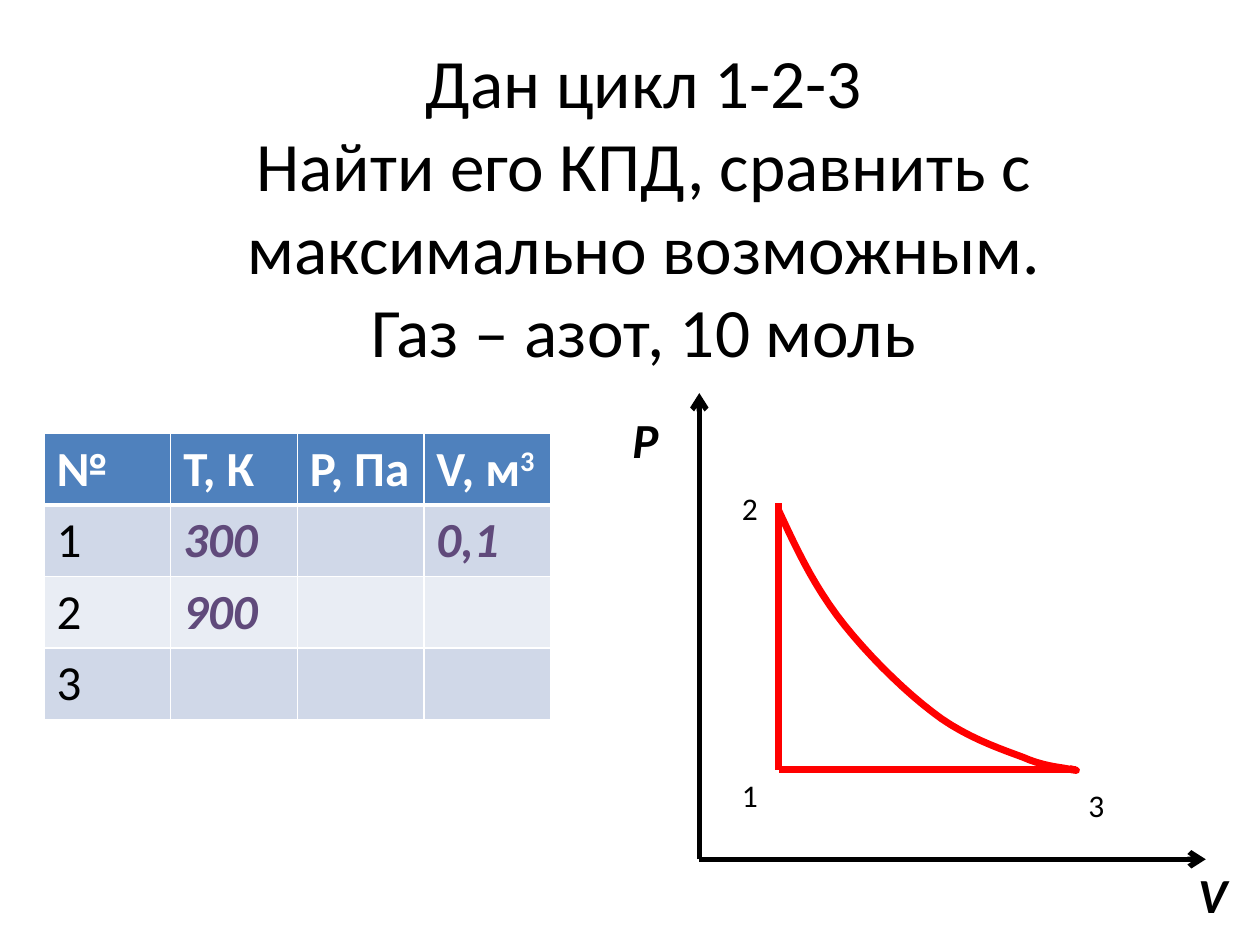
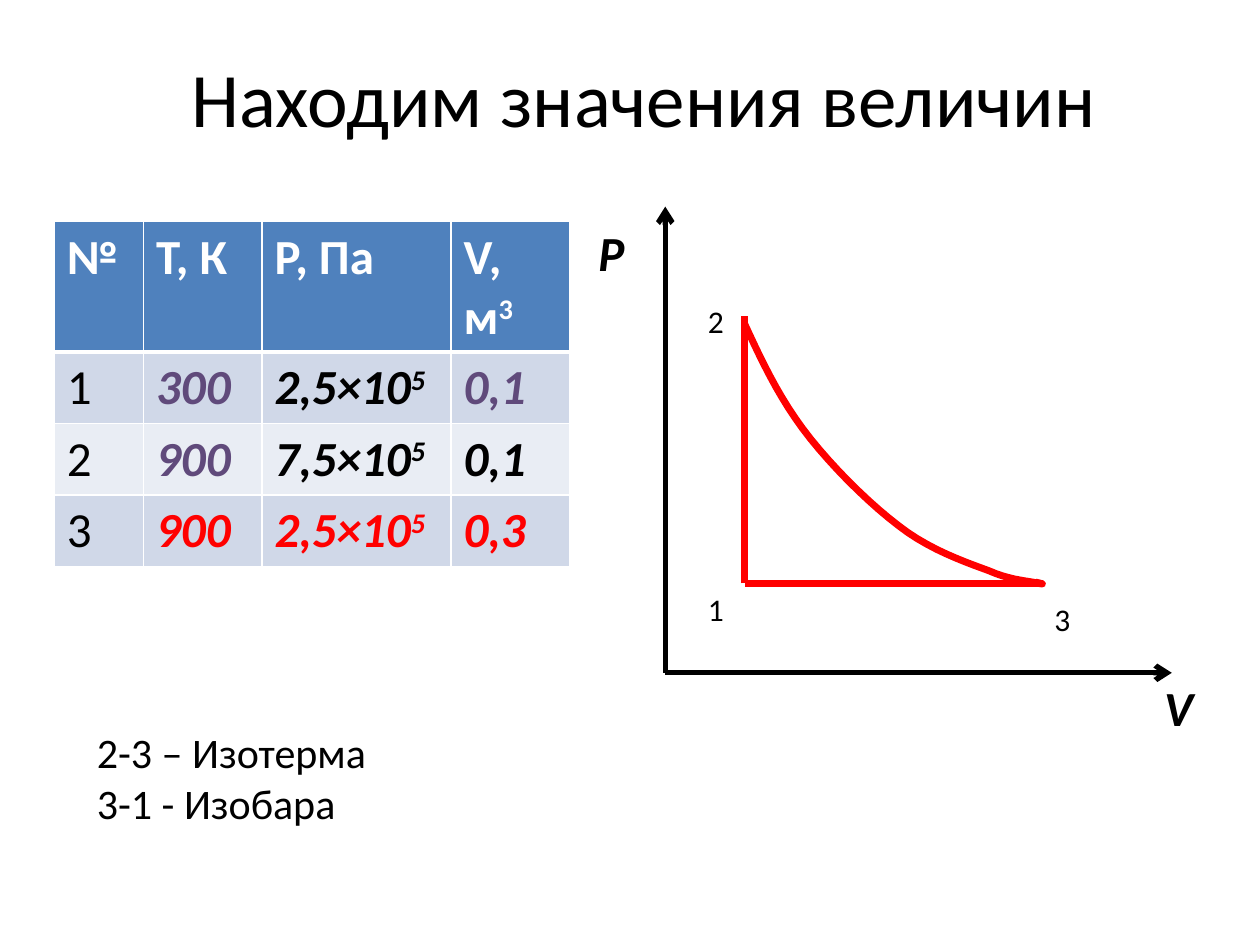
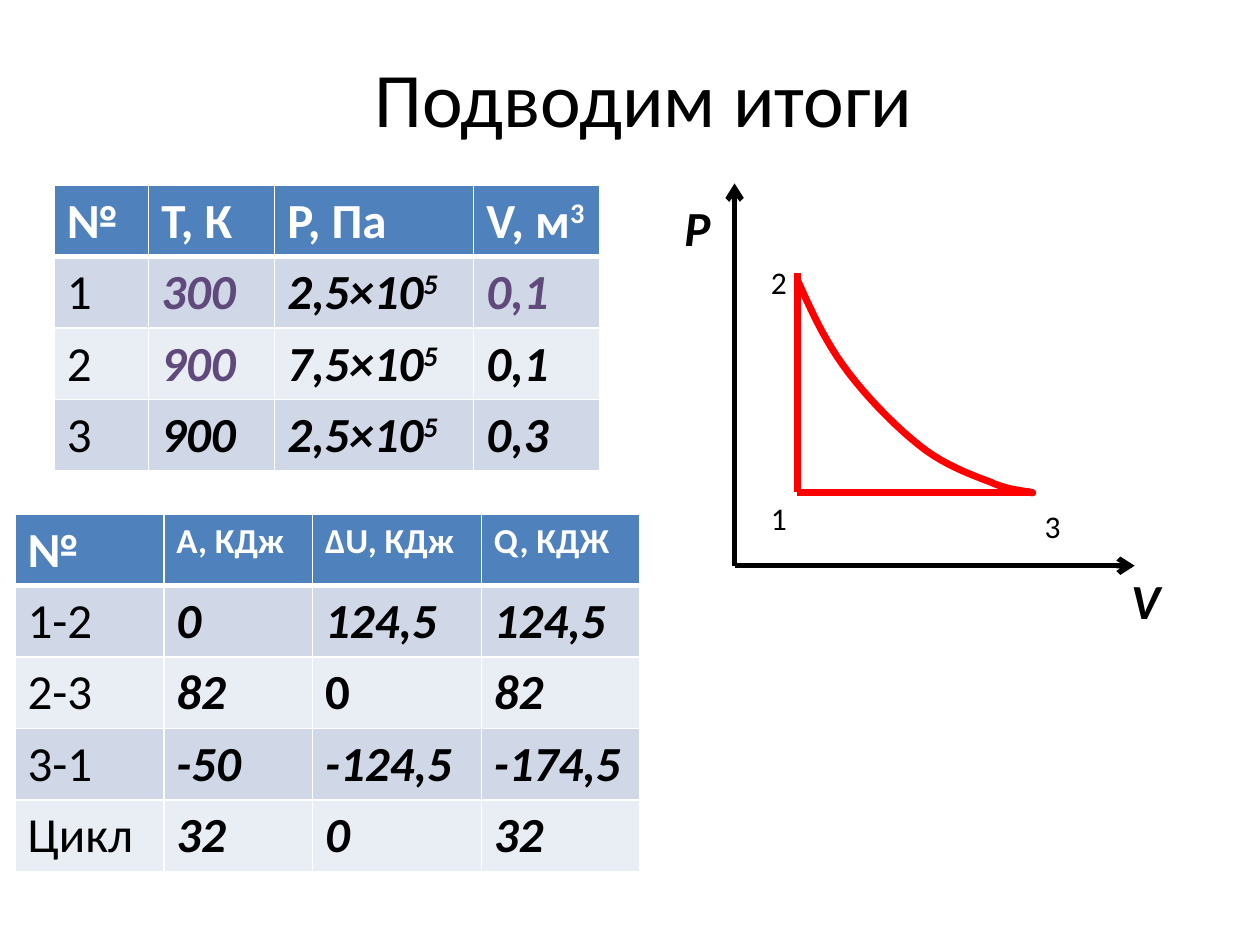
from itertools import chain

from pptx import Presentation
from pptx import util as u
from pptx.dml.color import RGBColor
from pptx.enum import shapes, text
from pptx.oxml import parse_xml
from pptx.oxml.ns import nsdecls, qn

COLS, ROWS = 100, 75
CELL = u.Inches(0.1)
FONT = "Calibri"
BLACK, WHITE, RED, PURPLE = "000000", "FFFFFF", "FF0000", "604A7B"
HEAD, ODD, EVEN = "4F81BD", "D0D8E8", "E9EDF4"
MARKS = {
    "*": {"color": PURPLE},
    "!": {"color": RED},
    "_": {"italic": False},
}

STATE_HEAD = ["№", "T, К", "P, Па", "V, м^3"]
GIVEN = [["1", "*300", "", "*0,1"], ["2", "*900", "", ""], ["3", "", "", ""]]
FOUND = [["1", "*300", "2,5×10^5", "*0,1"], ["2", "*900", "7,5×10^5", "0,1"]]
HEAT_HEAD = ["№", "A, КДж", "ΔU, КДж", "Q, КДЖ"]
HEAT = [
    ["1-2", "0", "124,5", "124,5"],
    ["2-3", "82", "_0", "82"],
    ["3-1", "-50", "-124,5", "-174,5"],
    ["Цикл", "32", "0", "32"],
]

START = (6.3, 27.7)
BENDS = [
    ((7.6, 24.9), (8.9, 22.1), (10.9, 19.4)),
    ((12.9, 16.7), (16, 13.6), (18.5, 11.7)),
    ((20.9, 9.8), (23.8, 8.8), (25.7, 8.1)),
    ((27.5, 7.3), (29, 7.3), (29.6, 7.1)),
    ((30.3, 7), (29.8, 7.1), (29.4, 7.2)),
]
POINTS = [("1", 2.4, 7.1), ("2", 2.4, 29.9), ("3", 29.9, 6.3)]


def grid(*cells):
    """Turn grid cells into lengths."""
    return [u.Emu(round(c * CELL)) for c in cells]


def rgb(code):
    """Turn a hex string into a colour."""
    return RGBColor.from_string(code)


def write(frame, words, size=28, color=BLACK, bold=False, italic=False, align=None):
    """Write lines of text; ^ starts a superscript."""
    for i, line in enumerate(words.split("\n")):
        para = frame.add_paragraph() if i else frame.paragraphs[0]
        para.alignment = align
        for j, part in enumerate(line.split("^")):
            run = para.add_run()
            run.text = part
            font = run.font
            font.name, font.size = FONT, u.Pt(size)
            font.bold, font.italic = bold, italic
            font.color.rgb = rgb(color)
            if j:
                font._element.set("baseline", "30000")


def label(slide, words, x, y, w, h, **style):
    """Add a text box that fits its text."""
    frame = slide.shapes.add_textbox(*grid(x, y, w, h)).text_frame
    frame.word_wrap = False
    frame.auto_size = text.MSO_AUTO_SIZE.SHAPE_TO_FIT_TEXT
    write(frame, words, **style)


def title(slide, words, h=9.3, size=44):
    """Add the centred slide title."""
    frame = slide.shapes.add_textbox(*grid(5, 3, 92.2, h)).text_frame
    frame.word_wrap = True
    frame.vertical_anchor = text.MSO_ANCHOR.MIDDLE
    write(frame, words, size=size, align=text.PP_ALIGN.CENTER)


def frame_cell(cell, fill, base):
    """Give a cell white borders and a fill."""
    props = cell._tc.get_or_add_tcPr()
    for side, width in (("L", 1), ("R", 1), ("T", 1), ("B", base)):
        props.append(parse_xml(
            f'<a:ln{side} {nsdecls("a")} w="{u.Pt(width)}"><a:solidFill>'
            f'<a:srgbClr val="{WHITE}"/></a:solidFill></a:ln{side}>'))
    cell.fill.solid()
    cell.fill.fore_color.rgb = rgb(fill)


def table(slide, x, y, widths, head, body, small=28):
    """Add a banded table with a bold header row."""
    rows = [head] + body
    box = grid(x, y, sum(widths), 5.67 * len(rows))
    tab = slide.shapes.add_table(len(rows), len(widths), *box).table
    for col, width in zip(tab.columns, grid(*widths)):
        col.width = width
    for r, row in enumerate(rows):
        fill = (ODD if r % 2 else EVEN) if r else HEAD
        for c, words in enumerate(row):
            cell = tab.cell(r, c)
            frame_cell(cell, fill, 1 if r else 3)
            if not words:
                continue
            if r == 0:
                style = {"color": WHITE, "bold": True, "size": small if c else 28}
            elif c == 0:
                style = {}
            else:
                mark = MARKS.get(words[0], {})
                words = words[1:] if mark else words
                style = {"bold": True, "italic": True, **mark}
            write(cell.text_frame, words, **style)


def line(slide, start, end, color, width, arrow=False):
    """Draw a straight line, with an arrowhead if asked."""
    link = slide.shapes.add_connector(
        shapes.MSO_CONNECTOR.STRAIGHT, *grid(*start, *end))
    link.line.color.rgb = rgb(color)
    link.line.width = u.Pt(width)
    if arrow:
        link.line._get_or_add_ln().append(
            parse_xml(f'<a:tailEnd {nsdecls("a")} type="arrow"/>'))
    link._element.spPr.append(link._element.makeelement(qn("a:effectLst"), {}))


def bend(a, b, c, d, steps=10):
    """Return points along one cubic curve."""
    ts = [i / steps for i in range(1, steps + 1)]
    return [tuple((1 - t) ** 3 * p + 3 * t * (1 - t) ** 2 * q
                  + 3 * t * t * (1 - t) * r + t ** 3 * s
                  for p, q, r, s in zip(a, b, c, d)) for t in ts]


def curve(slide, spot):
    """Draw the isotherm."""
    starts = [START] + [b[-1] for b in BENDS]
    dots = chain.from_iterable(bend(a, *b) for a, b in zip(starts, BENDS))
    path = slide.shapes.build_freeform(*grid(*spot(*START)))
    path.add_line_segments([grid(*spot(*d)) for d in dots], close=False)
    shape = path.convert_to_shape()
    shape.shadow.inherit = False
    shape.fill.background()
    shape.line.color.rgb = rgb(RED)
    shape.line.width = u.Pt(4)


def cycle(slide, x, y, sx=1, sy=1):
    """Draw the P-V diagram from its axis corner, scaled."""
    def spot(dx, dy):
        """Place a diagram point on the slide."""
        return x + dx * sx, y - dy * sy

    for end in ((0, 37), (40.2, 0)):
        line(slide, spot(0, 0), spot(*end), BLACK, 3, arrow=True)
    for end in ((6.3, 28.3), (29.9, 7.1)):
        line(slide, spot(6.3, 7.1), spot(*end), RED, 4)
    curve(slide, spot)
    for name, dx, dy in (("P", -6.3, 36.2), ("V", 38.6, 0.1)):
        label(slide, name, *spot(dx, dy), 4.2 * sx, 5.7 * sy, bold=True, italic=True)
    for name, dx, dy in POINTS:
        label(slide, name, *spot(dx, dy), 3.3 * sx, 4 * sy, size=18)


def main():
    """Build and save the three slides."""
    deck = Presentation()
    deck.slide_width, deck.slide_height = grid(COLS, ROWS)
    task, values, result = (
        deck.slides.add_slide(deck.slide_layouts[6]) for _ in range(3))

    title(task, "Дан цикл 1-2-3\nНайти его КПД, сравнить с максимально возможным.\n"
                "Газ – азот, 10 моль", h=26.6, size=39.6)
    table(task, 3.5, 34.4, [10.05] * 4, STATE_HEAD, GIVEN)
    cycle(task, 55.5, 68.2)

    title(values, "Находим значения величин")
    table(values, 4.3, 17.6, [7.1, 9.4, 15, 9.4], STATE_HEAD,
          FOUND + [["3", "!900", "!2,5×10^5", "!0,3"]])
    cycle(values, 52.8, 53.4)
    label(values, "2-3 – Изотерма\n3-1 - Изобара", 6.7, 57.2, 23.6, 9.1, size=24)

    title(result, "Подводим итоги")
    table(result, 4.3, 14.7, [7.5, 10, 15.8, 10], STATE_HEAD,
          FOUND + [["3", "900", "2,5×10^5", "0,3"]])
    cycle(result, 58.3, 44.9, 0.79, 0.82)
    table(result, 1.2, 40.8, [11.8, 11.8, 13.4, 12.6], HEAT_HEAD, HEAT, small=20)

    deck.save("out.pptx")


if __name__ == "__main__":
    main()
